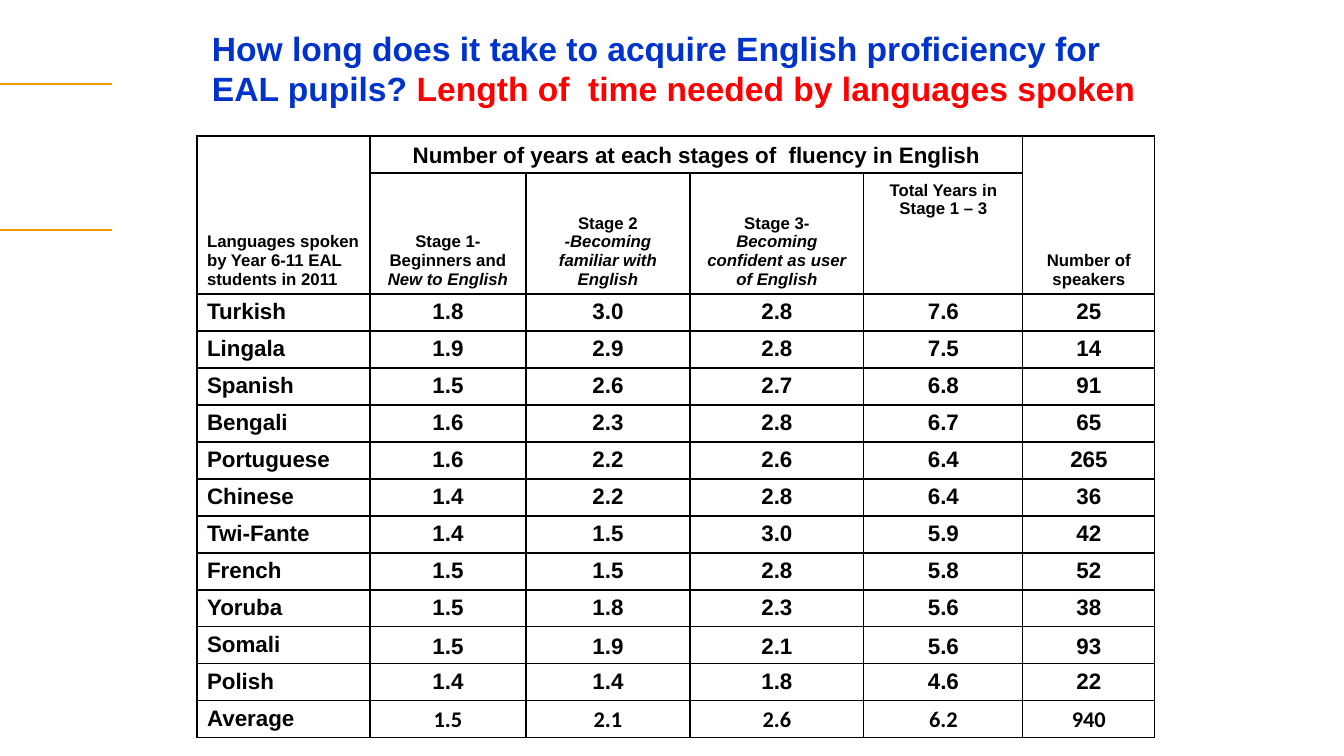
from lxml.etree import SubElement
from pptx import Presentation
from pptx.dml.color import RGBColor
from pptx.enum.shapes import MSO_CONNECTOR
from pptx.enum.text import MSO_ANCHOR, PP_ALIGN
from pptx.oxml import parse_xml
from pptx.oxml.ns import nsdecls, qn
from pptx.util import Emu, Pt

COLORS = {"accent": "F79900", "title": "0033CC", "subtitle": "FF0000", "ink": "000000"}

COLUMN_WIDTHS = [173, 156, 164, 174, 159, 132]
HEADER_HEIGHTS = [36, 50, 67]
BOTTOM_ANCHORED = ("Somali", "Average")
LANGUAGES = [
    ("Turkish", "1.8", "3.0", "2.8", "7.6", "25"),
    ("Lingala", "1.9", "2.9", "2.8", "7.5", "14"),
    ("Spanish", "1.5", "2.6", "2.7", "6.8", "91"),
    ("Bengali", "1.6", "2.3", "2.8", "6.7", "65"),
    ("Portuguese", "1.6", "2.2", "2.6", "6.4", "265"),
    ("Chinese", "1.4", "2.2", "2.8", "6.4", "36"),
    ("Twi-Fante", "1.4", "1.5", "3.0", "5.9", "42"),
    ("French", "1.5", "1.5", "2.8", "5.8", "52"),
    ("Yoruba", "1.5", "1.8", "2.3", "5.6", "38"),
    ("Somali", "1.5", "1.9", "2.1", "5.6", "93"),
    ("Polish", "1.4", "1.4", "1.8", "4.6", "22"),
    ("Average", "1.5", "2.1", "2.6", "6.2", "940"),
]
# Row, column, rows spanned, columns spanned, size, paragraphs of (text, italic)
HEADERS = [
    (0, 0, 3, 1, 12, [[("Languages spoken by Year 6-11 EAL students in 2011", False)]]),
    (0, 1, 1, 4, 16, [[("Number of years at each stages of  fluency in English", False)]]),
    (0, 5, 3, 1, 12, [[("Number of speakers", False)]]),
    (1, 1, 2, 1, 12, [[("Stage 1- Beginners and ", False), ("New to English", True)]]),
    (1, 2, 2, 1, 12, [[("Stage 2\v", False), ("-Becoming familiar with English", True)]]),
    (1, 3, 2, 1, 12, [[("Stage 3-", False)],
                      [("Becoming confident as user of English", True)]]),
    (1, 4, 1, 1, 12, [[("Total Years in", False)], [("Stage 1 – 3", False)]]),
]


def px(length):
    return Emu(round(length * 914400 / 100.8))


def color(name):
    return RGBColor.from_string(COLORS[name])


def set_font(para, size, name="Arial"):
    para.font.size = Pt(size)
    para.font.name = name
    para.font.bold = True


def add_accent_lines(page, left, top, width, gap):
    for y in (top, top + gap):
        line = page.shapes.add_connector(
            MSO_CONNECTOR.STRAIGHT, px(left), px(y), px(left + width), px(y))
        line.line.color.rgb = color("accent")
        line.line.width = Pt(1.5)
        SubElement(line._element.spPr, qn("a:effectLst"))


def add_title(page, left, top, width, height):
    box = page.shapes.add_textbox(px(left), px(top), px(width), px(height))
    frame = box.text_frame
    frame.word_wrap = True
    frame.vertical_anchor = MSO_ANCHOR.MIDDLE
    para = frame.paragraphs[0]
    set_font(para, 24)
    for text, tint in (
        ("How long does it take to acquire English proficiency for EAL pupils? ", "title"),
        ("Length of  time needed by languages spoken", "subtitle"),
    ):
        span = para.add_run()
        span.text = text
        span.font.color.rgb = color(tint)


def set_borders(cell, hidden=""):
    properties = cell._tc.get_or_add_tcPr()
    for position, side in enumerate("LRTB"):
        fill = "<a:noFill/>" if side == hidden else (
            f'<a:solidFill><a:srgbClr val="{COLORS["ink"]}"/></a:solidFill>')
        properties.insert(position, parse_xml(
            f'<a:ln{side} {nsdecls("a")} w="12700">{fill}</a:ln{side}>'))


def fill_cell(cell, paragraphs, size, align, anchor, font="Arial"):
    cell.vertical_anchor = anchor
    frame = cell.text_frame
    for number, pieces in enumerate(paragraphs):
        para = frame.add_paragraph() if number else frame.paragraphs[0]
        para.alignment = align
        set_font(para, size, font)
        para.font.color.rgb = color("ink")
        for text, italic in pieces:
            span = para.add_run()
            span.text = text.rstrip("\v")
            if italic:
                span.font.italic = True
            if text.endswith("\v"):
                para.add_line_break()


def add_language_table(page, left, top):
    # Every sixth language row is one px lower, so the rows share the height
    heights = HEADER_HEIGHTS + [36 if n % 6 == 0 else 37 for n in range(len(LANGUAGES))]
    frame = page.shapes.add_table(
        len(heights), len(COLUMN_WIDTHS), px(left), px(top),
        px(sum(COLUMN_WIDTHS)), px(sum(heights)))
    table = frame.table
    table.first_row = table.horz_banding = False
    for column, width in zip(table.columns, COLUMN_WIDTHS):
        column.width = px(width)
    for row, height in zip(table.rows, heights):
        row.height = px(height)

    # Grid, open between the two cells of the total column's header
    open_sides = {(1, 4): "B", (2, 4): "T"}
    for r in range(len(heights)):
        for c in range(len(COLUMN_WIDTHS)):
            cell = table.cell(r, c)
            cell.fill.background()
            set_borders(cell, open_sides.get((r, c), ""))

    # Header cells
    for r, c, rows, columns, size, paragraphs in HEADERS:
        cell = table.cell(r, c)
        if rows * columns > 1:
            cell.merge(table.cell(r + rows - 1, c + columns - 1))
        align = PP_ALIGN.CENTER if c else PP_ALIGN.LEFT
        fill_cell(cell, paragraphs, size, align, MSO_ANCHOR.BOTTOM)

    # Language rows
    for r, values in enumerate(LANGUAGES, len(HEADER_HEIGHTS)):
        for c, value in enumerate(values):
            low = c and values[0] in BOTTOM_ANCHORED
            fill_cell(
                table.cell(r, c), [[(value, False)]], 16,
                PP_ALIGN.CENTER if c else PP_ALIGN.LEFT,
                MSO_ANCHOR.BOTTOM if low else MSO_ANCHOR.TOP,
                "Calibri" if c and values[0] == "Average" else "Arial")


def main():
    deck = Presentation()
    deck.slide_width, deck.slide_height = px(1344), px(756)
    page = deck.slides.add_slide(deck.slide_layouts[6])
    add_accent_lines(page, 0, 84, 112, 146)
    add_title(page, 202, 18, 948, 100)
    add_language_table(page, 197, 136)
    deck.save("out.pptx")


if __name__ == "__main__":
    main()
